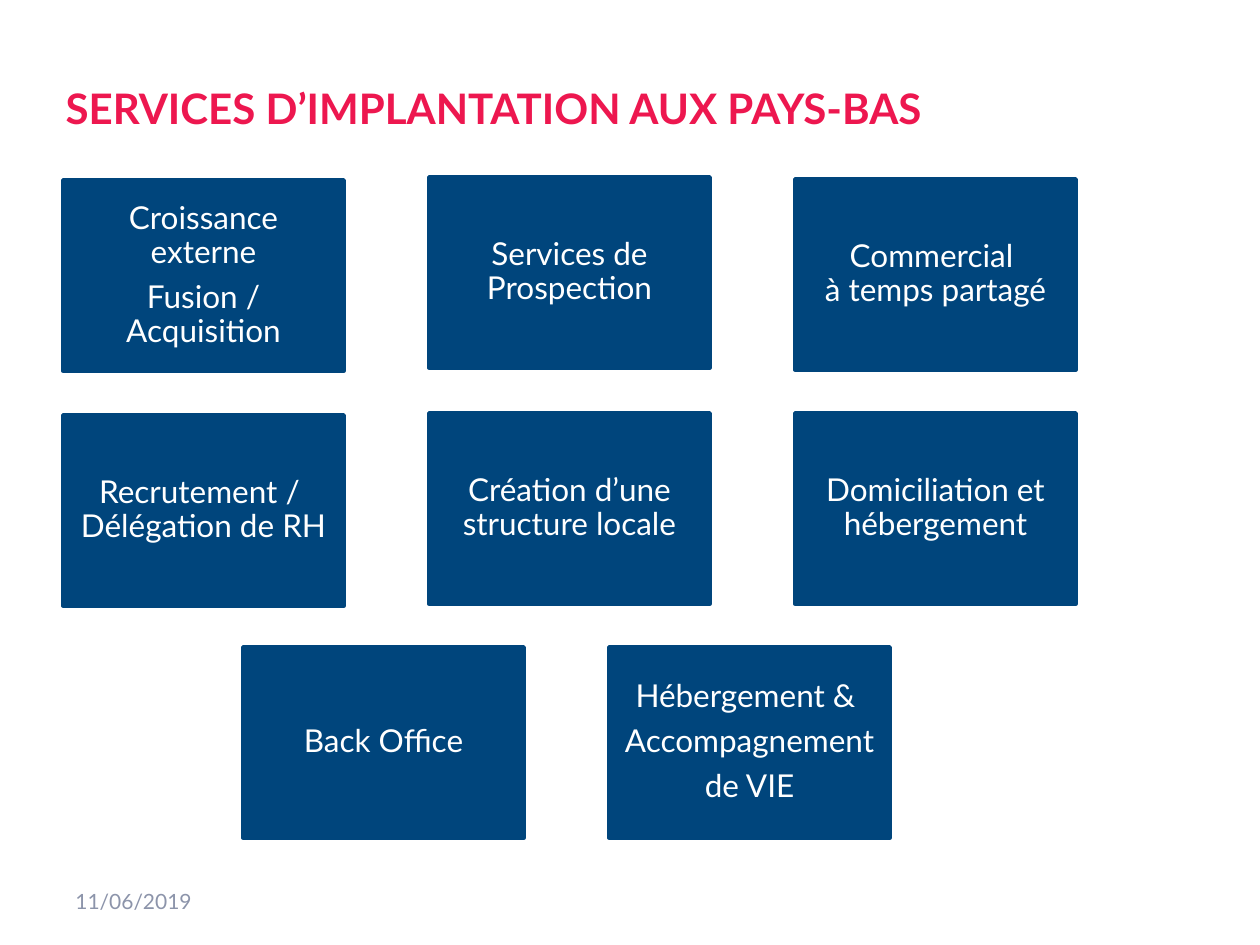
from pptx import Presentation
from pptx.dml.color import RGBColor
from pptx.enum.shapes import MSO_SHAPE
from pptx.enum.text import MSO_ANCHOR, MSO_AUTO_SIZE, PP_ALIGN
from pptx.util import Pt

RECTANGLE = MSO_SHAPE.RECTANGLE
MIDDLE = MSO_ANCHOR.MIDDLE
NO_FIT = MSO_AUTO_SIZE.NONE
LEFT, CENTER = PP_ALIGN.LEFT, PP_ALIGN.CENTER

NAVY = RGBColor(0x00, 0x45, 0x7C)
CRIMSON = RGBColor(0xED, 0x17, 0x4F)
GREY = RGBColor(0x8C, 0x94, 0xAA)
WHITE = RGBColor(0xFF, 0xFF, 0xFF)

EMU_PER_PX = 914400 / 126
TITLE_ONLY = 5


def px(length):
    return round(length * EMU_PER_PX)


def apply(target, values):
    for name, value in values.items():
        setattr(target, name, value)


class Painter:
    """Holds the text styles and the current slide."""

    FONT = "Lato"
    TITLE = ({"size": Pt(24), "bold": True}, CRIMSON,
             {"alignment": LEFT, "line_spacing": 1.5})
    DATE = ({"size": Pt(12)}, GREY, {"alignment": LEFT})
    SERVICE = ({"size": Pt(18)}, WHITE,
               {"alignment": CENTER, "line_spacing": 0.9, "space_after": Pt(6.3)})

    def __init__(self, page):
        self.page = page

    def fill_text(self, box, text, style):
        font, color, layout = style
        frame = box.text_frame
        apply(frame, {"word_wrap": True, "auto_size": NO_FIT,
                      "vertical_anchor": MIDDLE})
        frame.text = text
        for para in frame.paragraphs:
            apply(para, layout)
            for span in para.runs:
                apply(span.font, {"name": self.FONT, **font})
                span.font.color.rgb = color

    def title(self, text, left, top, width, height):
        box = self.page.shapes.title
        apply(box, {"left": px(left), "top": px(top),
                    "width": px(width), "height": px(height)})
        self.fill_text(box, text, self.TITLE)

    def date(self, text, *place):
        box = self.page.shapes.add_textbox(*map(px, place))
        self.fill_text(box, text, self.DATE)

    def service(self, text, *place):
        box = self.page.shapes.add_shape(RECTANGLE, *map(px, place))
        box.shadow.inherit = False
        box.fill.solid()
        box.fill.fore_color.rgb = NAVY
        box.line.color.rgb = NAVY
        box.line.width = Pt(2)
        self.fill_text(box, text, self.SERVICE)


# Each row: left edge, then (top, text) from left to right;
# "\n" starts a paragraph and "\v" breaks a line
SERVICE_ROWS = [
    (63, [(180, "Croissance externe\nFusion / Acquisition"),
          (177, "Services de Prospection"),
          (179, "Commercial \và temps partagé")]),
    (63, [(415, "Recrutement / \vDélégation de RH"),
          (413, "Création d’une structure locale"),
          (413, "Domiciliation et hébergement")]),
    (243, [(647, "Back Office"),
           (647, "Hébergement & \nAccompagnement \nde VIE")]),
]
COLUMN_STEP = 366
BOX_SIZE = (281, 191)


def main():
    deck = Presentation()
    apply(deck, {"slide_width": px(1260), "slide_height": px(945)})
    painter = Painter(deck.slides.add_slide(deck.slide_layouts[TITLE_ONLY]))

    # Title and date
    painter.title("SERVICES D’IMPLANTATION AUX PAYS-BAS", 53, 32, 1071, 126)
    painter.date("11/06/2019", 63, 876, 294, 50)

    # Service boxes
    for left, services in SERVICE_ROWS:
        for column, (top, text) in enumerate(services):
            painter.service(text, left + column * COLUMN_STEP, top, *BOX_SIZE)

    deck.save("out.pptx")


if __name__ == "__main__":
    main()
